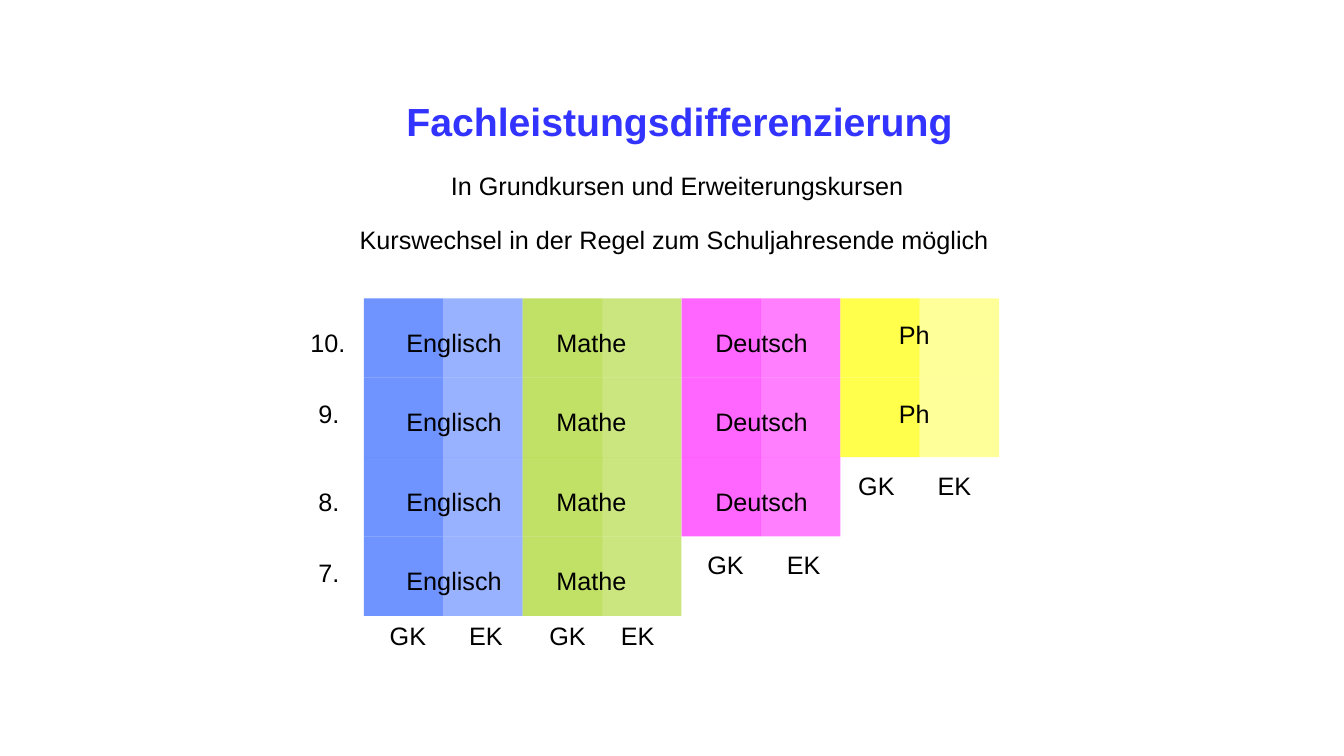
from dataclasses import dataclass

from lxml.etree import SubElement
from pptx import Presentation
from pptx.dml.color import RGBColor
from pptx.enum.shapes import MSO_SHAPE as Preset
from pptx.enum.text import MSO_AUTO_SIZE as AutoSize, PP_ALIGN as Align
from pptx.oxml.ns import qn
from pptx.slide import Slide
from pptx.util import Inches, Length, Pt

COLORS = {
    "title": "3333FF",
    "text": "000000",
    "english": "3366FF",
    "maths": "99CC00",
    "german": "FF00FF",
    "physics": "FFFF00",
}
FONT = "Arial"

# All places and sizes below are counted in columns and rows of this square grid.
CELL = 0.7875
GRID_LEFT, GRID_TOP = 3.61, 2.96
LINE_HEIGHT = 0.51


@dataclass(frozen=True)
class Label:
    text: str
    column: float
    row: float
    width: float
    height: float = LINE_HEIGHT
    size: int = 18
    color: str = "text"
    bold: bool = False
    centered: bool = False


@dataclass(frozen=True)
class Subject:
    name: str
    color: str
    column: int
    years: int
    opacities: tuple[int, int]
    name_offset: tuple[float, float]
    name_width: float
    course_offsets: tuple[float, float]
    course_drop: float
    centered: bool = False


HEADINGS = (
    Label("Fachleistungsdifferenzierung", 0.41, -2.6, 7.15, 0.72, 28, "title", True),
    Label("In Grundkursen und Erweiterungskursen", 0.97, -1.68, 6.01),
    Label("Kurswechsel in der Regel zum Schuljahresende möglich", -0.18, -1, 8.18),
)
YEARS = (
    Label("10.", -0.8, 0.3, 0.7),
    Label("9.", -0.7, 1.2, 0.52),
    Label("8.", -0.7, 2.3, 0.52),
    Label("7.", -0.7, 3.2, 0.52),
)
SUBJECTS = (
    Subject("Englisch", "english", 0, 4, (70, 50), (0.41, 0.3), 1.47, (0.2, 1.2), 0),
    Subject("Mathe", "maths", 2, 4, (60, 50), (0.3, 0.3), 1.14, (0.21, 1.11), 0),
    Subject("Deutsch", "german", 4, 3, (60, 50), (0.3, 0.3), 1.42, (0.2, 1.2), 0.1),
    Subject("Ph", "physics", 6, 2, (70, 40), (0.3, 0.2), 1.26, (0.1, 1.1), 0.11, True),
)
COURSES = (("GK", 0.72), ("EK", 0.69))


def grid_box(column: float, row: float, width: float, height: float) -> tuple[Length, ...]:
    """Turn grid units into left, top, width and height."""
    return (
        Inches(GRID_LEFT + column * CELL),
        Inches(GRID_TOP + row * CELL),
        Inches(width * CELL),
        Inches(height * CELL),
    )


def draw_label(slide: Slide, label: Label) -> None:
    box = slide.shapes.add_textbox(
        *grid_box(label.column, label.row, label.width, label.height)
    )
    frame = box.text_frame
    frame.text = label.text
    frame.word_wrap = label.centered
    frame.auto_size = AutoSize.SHAPE_TO_FIT_TEXT
    paragraph = frame.paragraphs[0]
    paragraph.alignment = Align.CENTER if label.centered else Align.LEFT
    font = paragraph.runs[0].font
    font.name = FONT
    font.size = Pt(label.size)
    font.bold = label.bold
    font.color.rgb = RGBColor.from_string(COLORS[label.color])


def draw_cell(slide: Slide, column: int, row: int, color: str, opacity: int) -> None:
    cell = slide.shapes.add_shape(Preset.RECTANGLE, *grid_box(column, row, 1, 1))
    cell.shadow.inherit = False
    cell.line.fill.background()
    cell.fill.solid()
    cell.fill.fore_color.rgb = RGBColor.from_string(COLORS[color])
    tint = cell.element.spPr.find(qn("a:solidFill"))[0]
    SubElement(tint, qn("a:alpha"), val=str(opacity * 1000))


def draw_subject(slide: Slide, subject: Subject) -> None:
    """Draw one subject's cells, its name in every year and its course labels."""
    name_column, name_row = subject.name_offset
    for year in range(subject.years):
        for side, opacity in enumerate(subject.opacities):
            draw_cell(slide, subject.column + side, year, subject.color, opacity)
        draw_label(slide, Label(
            subject.name,
            subject.column + name_column,
            year + name_row,
            subject.name_width,
            centered=subject.centered,
        ))
    for (course, width), offset in zip(COURSES, subject.course_offsets):
        draw_label(slide, Label(
            course,
            subject.column + offset,
            subject.years + subject.course_drop,
            width,
        ))


def main() -> None:
    presentation = Presentation()
    presentation.slide_width = Inches(13.33)
    presentation.slide_height = Inches(7.5)
    slide = presentation.slides.add_slide(presentation.slide_layouts[6])
    for label in HEADINGS + YEARS:
        draw_label(slide, label)
    for subject in SUBJECTS:
        draw_subject(slide, subject)
    presentation.save("out.pptx")


if __name__ == "__main__":
    main()
